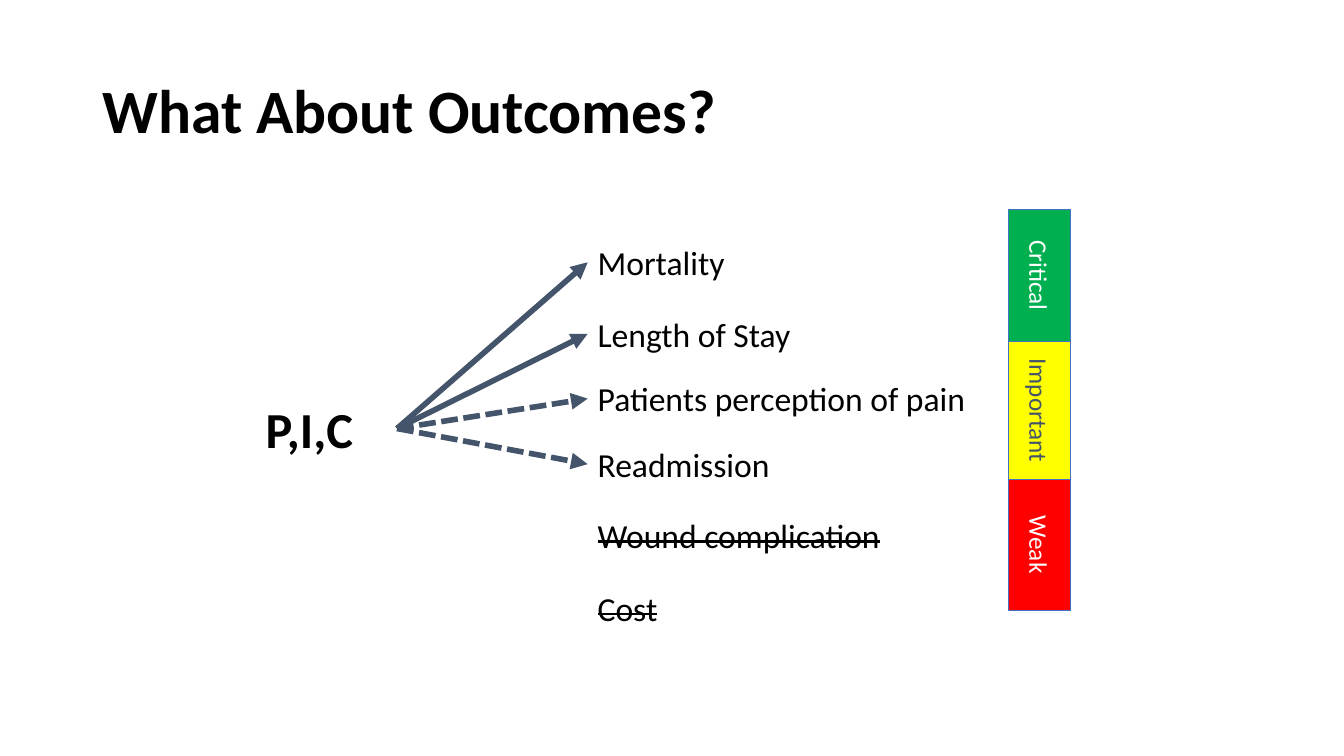
from lxml.etree import SubElement
from pptx import Presentation
from pptx.dml.color import RGBColor as RGB
from pptx.enum.dml import MSO_LINE as DASH
from pptx.enum.shapes import MSO_CONNECTOR as CONNECTOR, MSO_SHAPE as SHAPE
from pptx.enum.text import MSO_ANCHOR as ANCHOR, MSO_AUTO_SIZE as AUTO_SIZE, PP_ALIGN as ALIGN
from pptx.oxml.ns import qn
from pptx.util import Pt

THEME = {
    "font": "Calibri",
    "black": RGB.from_string("000000"),
    "white": RGB.from_string("FFFFFF"),
    "slate": RGB.from_string("44546A"),
    "outline": RGB.from_string("4472C4"),
    "green": RGB.from_string("00B050"),
    "yellow": RGB.from_string("FFFF00"),
    "red": RGB.from_string("FF0000"),
    "title_size": Pt(44),
    "question_size": Pt(36),
    "outcome_size": Pt(24),
    "rating_size": Pt(18),
}


def write(holder, words, size, color="black", bold=False, align=ALIGN.LEFT, **frame_format):
    frame = holder.text_frame
    for key, value in {"word_wrap": True, **frame_format}.items():
        setattr(frame, key, value)
    paragraph = frame.paragraphs[0]
    paragraph.alignment = align
    run = paragraph.add_run()
    run.text = words
    font_format = {"name": THEME["font"], "size": THEME[size], "bold": bold}
    for key, value in font_format.items():
        setattr(run.font, key, value)
    run.font.color.rgb = THEME[color]
    return run


deck = Presentation()
deck.slide_width, deck.slide_height = Pt(960), Pt(540)
slide = deck.slides.add_slide(deck.slide_layouts[6])

title = slide.shapes.add_textbox(Pt(66.24), Pt(28.8), Pt(828), Pt(104.4))
write(title, "What About Outcomes?", "title_size", bold=True, vertical_anchor=ANCHOR.MIDDLE)
title.text_frame.paragraphs[0].line_spacing = 0.9

diagram = slide.shapes.add_group_shape().shapes
question = diagram.add_textbox(Pt(158.4), Pt(280.6), Pt(125.2), Pt(51))
write(question, "P,I,C", "question_size", bold=True, align=ALIGN.CENTER,
      auto_size=AUTO_SIZE.SHAPE_TO_FIT_TEXT)

outcomes = [
    ("Mortality", 169.2, 130, "solid"),
    ("Length of Stay", 220.3, 184, "solid"),
    ("Patients perception of pain", 266.6, 309, "dashed"),
    ("Readmission", 313.4, 184, "dashed"),
    ("Wound complication", 364.4, 236, "struck"),
    ("Cost", 416.4, 236, "struck"),
]
for words, top, width, status in outcomes:
    outcome = diagram.add_textbox(Pt(419.8), Pt(top), Pt(width), Pt(36.3))
    run = write(outcome, words, "outcome_size", auto_size=AUTO_SIZE.SHAPE_TO_FIT_TEXT)
    if status == "struck":
        run._r.get_or_add_rPr().set("strike", "sngStrike")
        continue
    arrow = diagram.add_connector(CONNECTOR.STRAIGHT, question.left, question.top,
                                  outcome.left, outcome.top)
    arrow.begin_connect(question, 3)
    arrow.end_connect(outcome, 1)
    arrow.line.color.rgb = THEME["slate"]
    arrow.line.width = Pt(4)
    if status == "dashed":
        arrow.line.dash_style = DASH.SQUARE_DOT
    SubElement(arrow.line._get_or_add_ln(), qn("a:tailEnd"), type="triangle")
    SubElement(arrow._element.spPr, qn("a:effectLst"))

scale = slide.shapes.add_group_shape().shapes
rating_top = 149.8
ratings = [
    ("Critical", 93.8, "green", "white"),
    ("Important", 98.6, "yellow", "slate"),
    ("Weak", 93.8, "red", "white"),
]
for words, height, fill, ink in ratings:
    rating = scale.add_shape(SHAPE.RECTANGLE, Pt(720.6), Pt(rating_top), Pt(44), Pt(height))
    rating.shadow.inherit = False
    rating.fill.solid()
    rating.fill.fore_color.rgb = THEME[fill]
    rating.line.color.rgb = THEME["outline"]
    rating.line.width = Pt(0.5)
    write(rating, words, "rating_size", ink, align=ALIGN.CENTER, vertical_anchor=ANCHOR.MIDDLE)
    rating.text_frame._txBody.bodyPr.set("vert", "vert")
    rating_top += height

deck.save("out.pptx")
